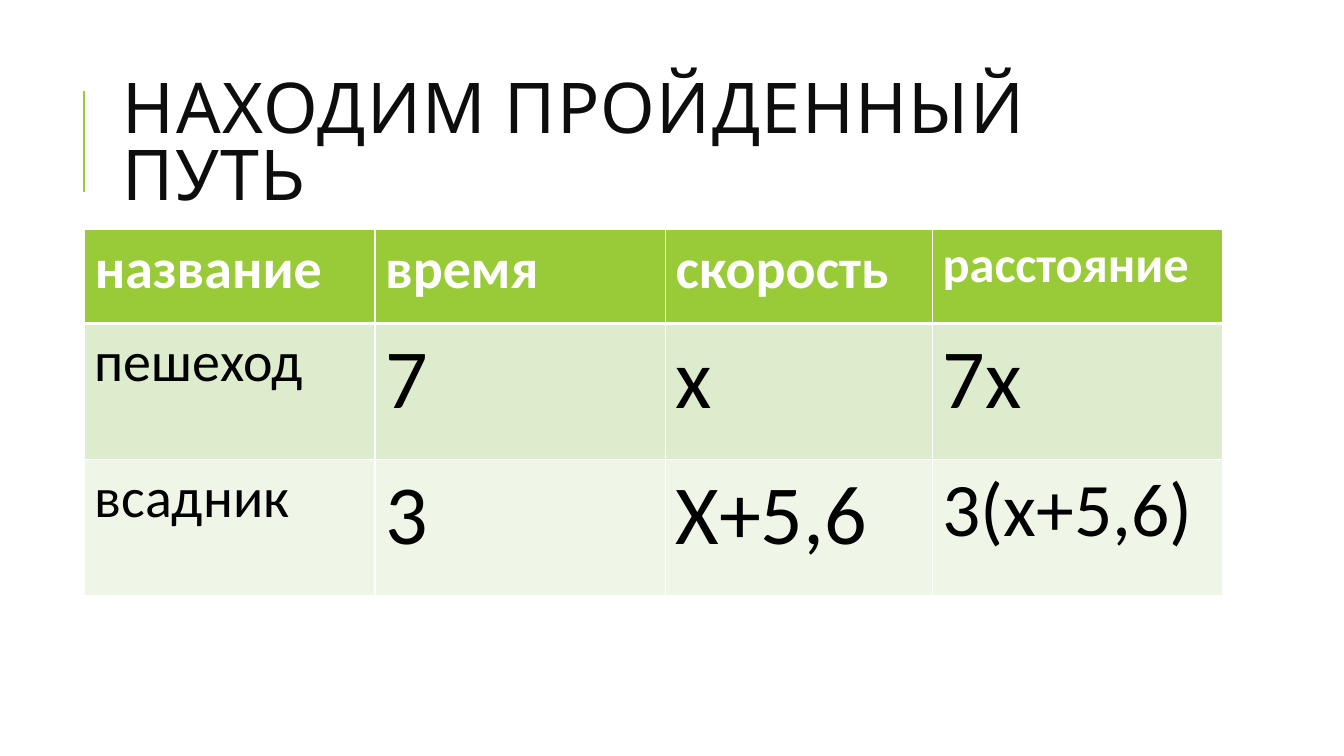
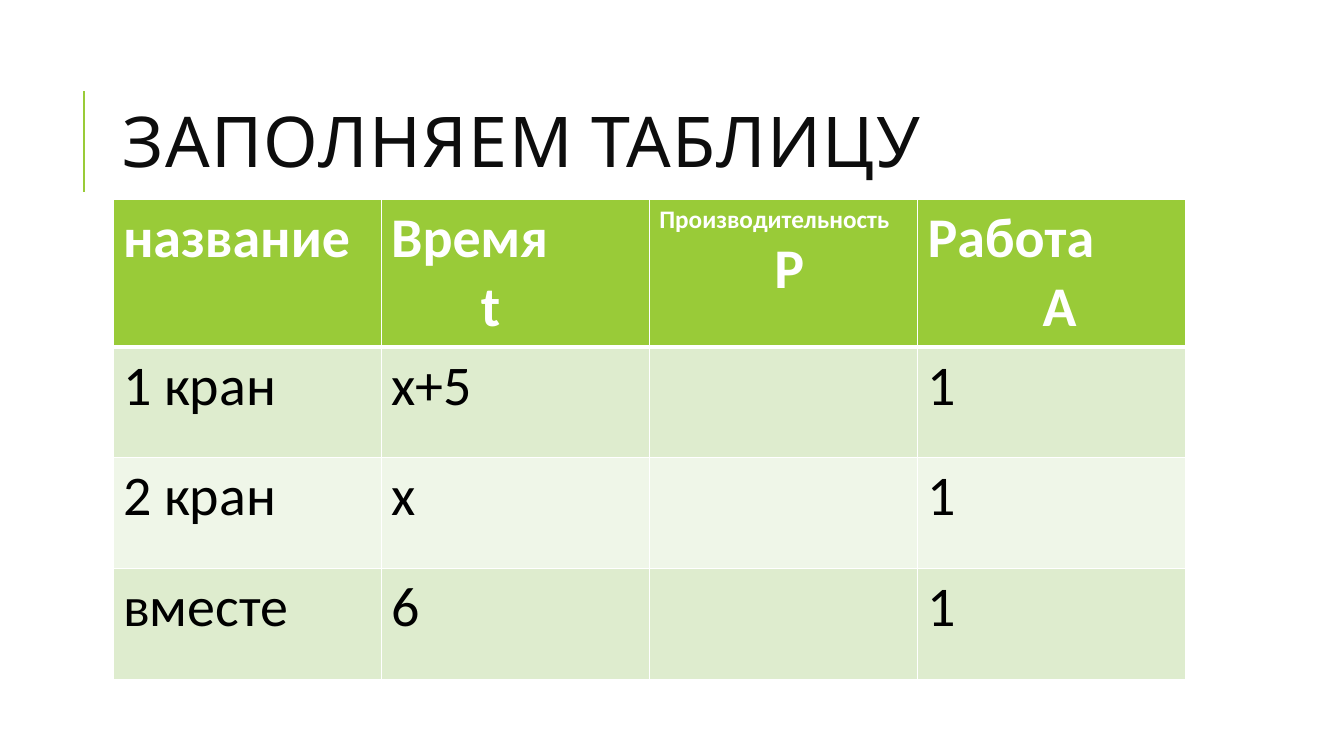
from dataclasses import dataclass

from lxml import etree
from pptx import Presentation
from pptx.dml.color import RGBColor
from pptx.enum.shapes import MSO_CONNECTOR
from pptx.enum.text import MSO_ANCHOR
from pptx.oxml.ns import qn
from pptx.util import Inches, Pt


@dataclass(frozen=True)
class Theme:
    accent: str = "99CB38"
    bands: tuple = ("DEECCE", "EFF6E8")
    white: str = "FFFFFF"
    black: str = "000000"
    title_color: str = "0D0D0D"
    title_font: str = "Cabin"
    body_font: str = "Calibri"
    title_size: int = 50
    body_size: int = 40
    caption_size: int = 18
    label_size: int = 36
    formula_size: int = 54
    value_size: int = 60
    grid: int = 1
    header_rule: int = 3


THEME = Theme()


@dataclass(frozen=True)
class Line:
    """One paragraph of a cell; indent is in inches."""
    text: str
    size: int = THEME.body_size
    indent: float = 0


def value(text):
    return Line(text, THEME.value_size)


SLIDES = [
    {
        "title": "НАХОДИМ ПРОЙДЕННЫЙ ПУТЬ",
        "corner": (0.84, 2.28),
        "columns": (2.88, 2.88, 2.65, 2.88),
        "heights": (0.93, 1.35, 1.35),
        "rows": [
            ["название", "время", "скорость", Line("расстояние", THEME.label_size)],
            ["пешеход", value("7"), value("х"), value("7х")],
            ["всадник", value("3"), value("Х+5,6"), Line("3(х+5,6)", THEME.formula_size)],
        ],
    },
    {
        "title": "ЗАПОЛНЯЕМ ТАБЛИЦУ",
        "corner": (1.12, 1.98),
        "columns": (2.66,) * 4,
        "heights": (1.46, 1.1, 1.1, 1.1),
        "rows": [
            [
                "название",
                ("Время", Line("t", indent=0.89)),
                (Line("Производительность", THEME.caption_size), Line("Р", indent=1.14)),
                ("Работа", Line("А", indent=1.14)),
            ],
            ["1 кран", "х+5", "", "1"],
            ["2 кран", "х", "", "1"],
            ["вместе", "6", "", "1"],
        ],
    },
]


def rgb(color):
    return RGBColor.from_string(color)


def write(paragraph, text, *, size, color, font=THEME.body_font, bold=False,
          indent=0, line_spacing=None, tracking=None):
    run = paragraph.add_run()
    run.text = text
    run.font.size = Pt(size)
    run.font.name = font
    run.font.bold = bold
    run.font.color.rgb = rgb(color)
    if line_spacing:
        paragraph.line_spacing = line_spacing
    if indent:
        paragraph._p.get_or_add_pPr().set("marL", str(Inches(indent)))
    if tracking:
        run._r.get_or_add_rPr().set("spc", str(tracking * 100))


def add_title(slide, text):
    rule = slide.shapes.add_connector(
        MSO_CONNECTOR.STRAIGHT, Inches(0.83), Inches(1.9), Inches(0.83), Inches(0.9))
    rule.line.color.rgb = rgb(THEME.accent)
    rule.line.width = Pt(1.5)
    etree.SubElement(rule._element.spPr, qn("a:effectLst"))

    box = slide.shapes.add_textbox(Inches(1.12), Inches(0.64), Inches(10.63), Inches(1.64))
    frame = box.text_frame
    frame.word_wrap = True
    frame.vertical_anchor = MSO_ANCHOR.MIDDLE
    write(frame.paragraphs[0], text, size=THEME.title_size, color=THEME.title_color,
          font=THEME.title_font, line_spacing=0.8, tracking=1)


def set_borders(cell, top, bottom):
    """Draw white cell borders; the schema wants them ahead of the fill."""
    properties = cell._tc.get_or_add_tcPr()
    widths = {"lnL": THEME.grid, "lnR": THEME.grid, "lnT": top, "lnB": bottom}
    for position, (side, width) in enumerate(widths.items()):
        border = etree.Element(qn(f"a:{side}"), w=str(Pt(width)))
        fill = etree.SubElement(border, qn("a:solidFill"))
        etree.SubElement(fill, qn("a:srgbClr"), val=THEME.white)
        properties.insert(position, border)


def fill_cell(cell, content, row):
    header = row == 0
    cell.fill.solid()
    cell.fill.fore_color.rgb = rgb(THEME.accent if header else THEME.bands[(row - 1) % 2])
    set_borders(cell,
                top=THEME.header_rule if row == 1 else THEME.grid,
                bottom=THEME.header_rule if header else THEME.grid)
    if not content:
        return
    lines = content if isinstance(content, tuple) else (content,)
    frame = cell.text_frame
    for number, line in enumerate(lines):
        if isinstance(line, str):
            line = Line(line)
        paragraph = frame.add_paragraph() if number else frame.paragraphs[0]
        write(paragraph, line.text, size=line.size, indent=line.indent, bold=header,
              color=THEME.white if header else THEME.black)


def add_data_table(slide, rows, corner, columns, heights):
    left, top = corner
    table = slide.shapes.add_table(
        len(rows), len(columns), Inches(left), Inches(top),
        Inches(sum(columns)), Inches(sum(heights))).table
    for column, width in zip(table.columns, columns):
        column.width = Inches(width)
    for table_row, height in zip(table.rows, heights):
        table_row.height = Inches(height)
    for r, row in enumerate(rows):
        for c, content in enumerate(row):
            fill_cell(table.cell(r, c), content, r)


def main():
    deck = Presentation()
    deck.slide_width = Inches(13.33)
    deck.slide_height = Inches(7.5)
    blank = deck.slide_layouts[6]
    for content in SLIDES:
        slide = deck.slides.add_slide(blank)
        add_title(slide, content["title"])
        add_data_table(slide, content["rows"], content["corner"],
                       content["columns"], content["heights"])
    deck.save("out.pptx")


if __name__ == "__main__":
    main()
